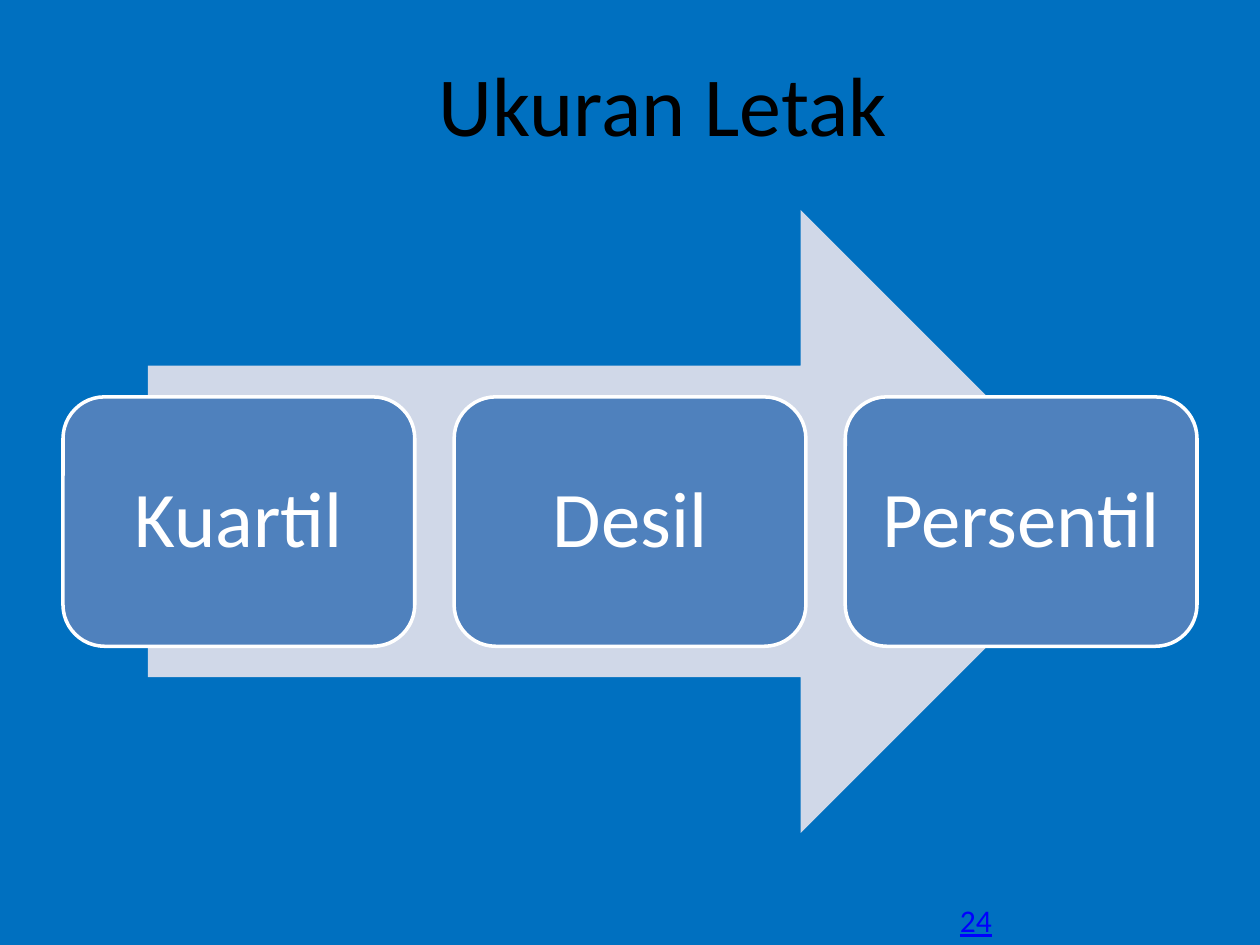
from pptx import Presentation
from pptx.dml.color import RGBColor as RGB
from pptx.enum.shapes import MSO_SHAPE as SHAPE
from pptx.enum.text import MSO_ANCHOR as ANCHOR, PP_ALIGN as ALIGN
from pptx.util import Pt

COLORS = {
    "background": "0070C0",
    "title": "000000",
    "number": "0000FF",
    "arrow": "D0D8E8",
    "card": "4F81BD",
    "white": "FFFFFF",
}


def color(name):
    return RGB.from_string(COLORS[name])


def write(sp, text, size, color_name, align=ALIGN.CENTER):
    """Fill the shape's first paragraph and return it."""
    p = sp.text_frame.paragraphs[0]
    p.text = text
    p.alignment = align
    p.font.name = "Calibri"
    p.font.size = Pt(size)
    p.font.color.rgb = color(color_name)
    return p


prs = Presentation()
prs.slide_width, prs.slide_height = Pt(720), Pt(540)
s = prs.slides.add_slide(prs.slide_layouts[6])
s.background.fill.solid()
s.background.fill.fore_color.rgb = color("background")

# Slide number
number = s.shapes.add_textbox(Pt(541.5), Pt(511.2), Pt(33), Pt(29))
p = write(number, "24", 18, "number", ALIGN.LEFT)
p.font.underline = True

# Title
title = s.shapes.add_textbox(Pt(54), Pt(23.8), Pt(649.5), Pt(62))
title.text_frame.word_wrap = True
title.text_frame.margin_top = Pt(6)
title.text_frame.margin_bottom = 0
write(title, "Ukuran Letak", 48, "title")

# Arrow behind the cards
arrow = s.shapes.add_shape(SHAPE.RIGHT_ARROW, Pt(84.5), Pt(120), Pt(551), Pt(356))
arrow.shadow.inherit = False
arrow.fill.solid()
arrow.fill.fore_color.rgb = color("arrow")
arrow.line.fill.background()

# Three evenly spaced cards
LEFT, WIDTH, GAP = 36, 201, 22.5
for i, label in enumerate(["Kuartil", "Desil", "Persentil"]):
    card = s.shapes.add_shape(
        SHAPE.ROUNDED_RECTANGLE,
        Pt(LEFT + i * (WIDTH + GAP)), Pt(226.8), Pt(WIDTH), Pt(142.5))
    card.shadow.inherit = False
    card.fill.solid()
    card.fill.fore_color.rgb = color("card")
    card.line.color.rgb = color("white")
    card.line.width = Pt(2)
    tf = card.text_frame
    tf.word_wrap = True
    tf.vertical_anchor = ANCHOR.MIDDLE
    tf.margin_left = tf.margin_right = tf.margin_top = tf.margin_bottom = Pt(13.5)
    p = write(card, label, 45, "white")
    p.line_spacing = 0.9

prs.save("out.pptx")
